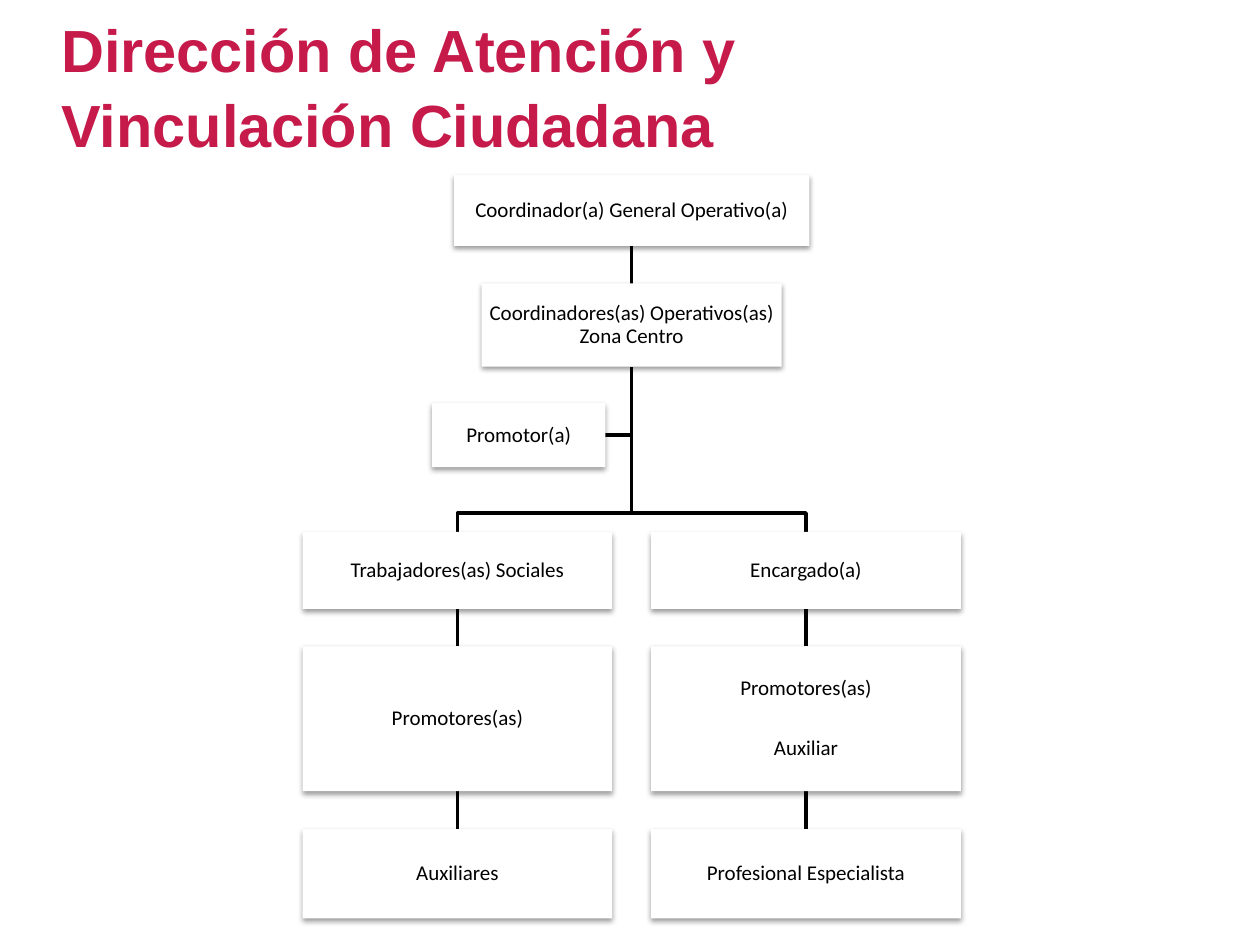
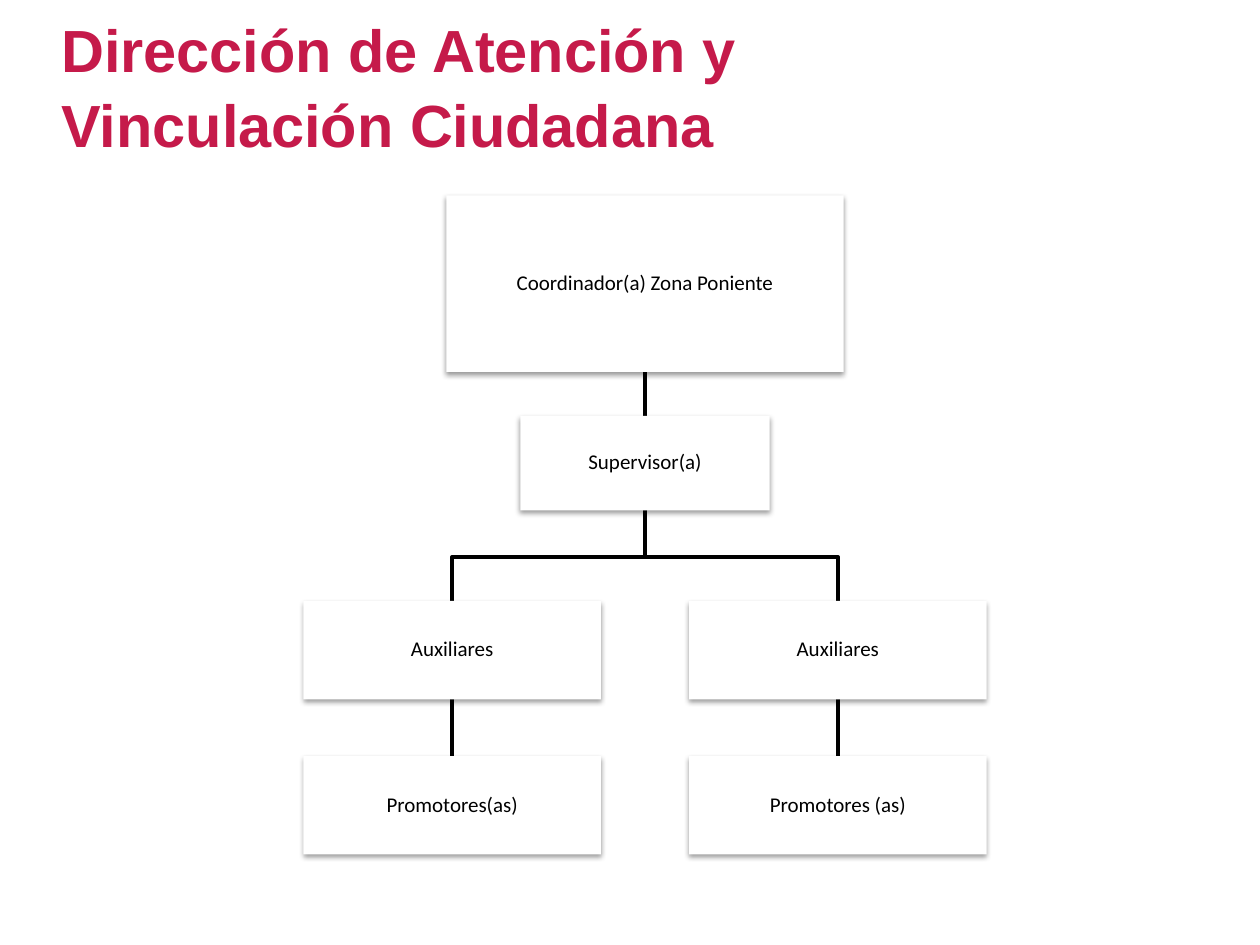
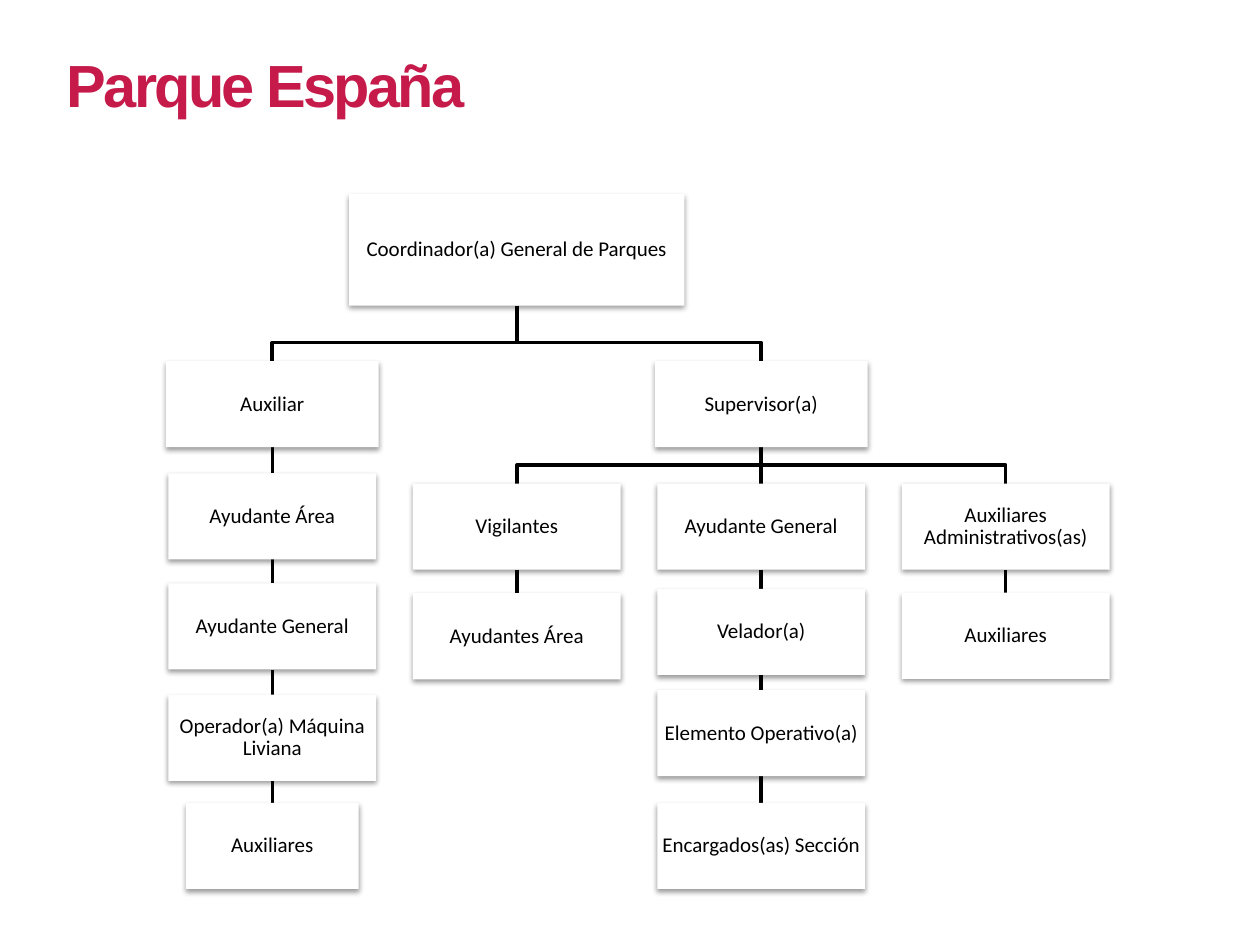
from lxml import etree
from pptx import Presentation
from pptx.dml.color import RGBColor
from pptx.enum.shapes import MSO_CONNECTOR, MSO_SHAPE
from pptx.enum.text import MSO_ANCHOR, PP_ALIGN
from pptx.oxml.ns import qn
from pptx.util import Pt

RECT = MSO_SHAPE.RECTANGLE
LINE = MSO_CONNECTOR.STRAIGHT
MIDDLE = MSO_ANCHOR.MIDDLE
CENTER = PP_ALIGN.CENTER
ROSE, BLACK, WHITE = "C51A4A", "000000", "FFFFFF"
AREA = "Dirección de Atención y Vinculación Ciudadana"


def color(code):
    """Turn a hex string into a colour."""
    return RGBColor.from_string(code)


def add_title(slide, text, left, top, width, height, track=0):
    """Write the slide title, with letter tracking in points."""
    box = slide.shapes.add_textbox(Pt(left), Pt(top), Pt(width), Pt(height))
    frame = box.text_frame
    frame.word_wrap = True
    frame.text = text
    para = frame.paragraphs[0]
    para.line_spacing = 1.04
    run = para.runs[0]
    font = run.font
    font.name, font.size, font.bold = "Arial", Pt(34), True
    font.color.rgb = color(ROSE)
    if track:
        run._r.get_or_add_rPr().set("spc", str(int(track * 100)))


def add_shade(shape):
    """Give a box a soft shadow that falls below it."""
    shape.shadow.inherit = False
    effects = shape._element.spPr.find(qn("a:effectLst"))
    shade = etree.SubElement(
        effects, qn("a:outerShdw"), blurRad=str(Pt(3.1)), dist=str(Pt(1.6)),
        dir="5400000", algn="ctr", rotWithShape="0")
    tint = etree.SubElement(shade, qn("a:srgbClr"), val=BLACK)
    etree.SubElement(tint, qn("a:alpha"), val="38000")


def add_post(slide, mid, top, width, height, text):
    """Draw one post of the chart, centred on mid."""
    shape = slide.shapes.add_shape(
        RECT, Pt(mid - width / 2), Pt(top), Pt(width), Pt(height))
    shape.fill.solid()
    shape.fill.fore_color.rgb = color(WHITE)
    shape.line.fill.background()
    add_shade(shape)
    frame = shape.text_frame
    frame.word_wrap = True
    frame.vertical_anchor = MIDDLE
    frame.margin_left = frame.margin_right = Pt(0.7)
    frame.margin_top = frame.margin_bottom = Pt(0.7)
    frame.text = text
    for rank, para in enumerate(frame.paragraphs):
        para.alignment = CENTER
        para.line_spacing = 0.9
        if rank:
            para.space_before = Pt(21)
        para.font.name, para.font.size = "Calibri", Pt(12)
        para.font.color.rgb = color(BLACK)


def set_line(shape):
    """Give a link its black line."""
    shape.line.color.rgb = color(BLACK)
    shape.line.width = Pt(2)


def add_line(slide, x1, y1, x2, y2):
    """Draw a straight link."""
    line = slide.shapes.add_connector(LINE, Pt(x1), Pt(y1), Pt(x2), Pt(y2))
    etree.SubElement(line._element.spPr, qn("a:effectLst"))
    set_line(line)


def add_bend(slide, x1, y1, x2, y2, drop):
    """Draw a link that turns at a bar set drop above its end."""
    bar = Pt(y2 - drop)
    pen = slide.shapes.build_freeform(Pt(x1), Pt(y1))
    pen.add_line_segments(
        [(Pt(x1), bar), (Pt(x2), bar), (Pt(x2), Pt(y2))], close=False)
    shape = pen.convert_to_shape()
    shape.fill.background()
    shape.shadow.inherit = False
    set_line(shape)


def add_chart(slide, posts, drop):
    """Draw links first, then posts of (boss, mid, top, width, height, text)."""
    for boss, mid, top, *_ in posts:
        if boss is None:
            continue
        _, x, y, _, tall, _ = posts[boss]
        if x == mid:
            add_line(slide, x, y + tall, mid, top)
        else:
            add_bend(slide, x, y + tall, mid, top, drop)
    for _, *post in posts:
        add_post(slide, *post)


def add_branch(posts, boss, mid, width, rows):
    """Hang rows of (top, height, text) below a boss, one under another."""
    for top, height, text in rows:
        posts.append((boss, mid, top, width, height, text))
        boss = len(posts) - 1


def draw_centre(slide):
    """Draw the central zone."""
    add_title(slide, AREA, 28, 2.5, 461, 90)
    mid, side = 361, 99.6
    posts = [(None, mid, 100, 203, 40.5, "Coordinador(a) General Operativo(a)"),
             (0, mid, 162, 171.5, 47.5,
              "Coordinadores(as) Operativos(as) Zona Centro")]
    tops, talls = (304, 369.3, 473.8), (44, 82.8, 51)
    names = [("Trabajadores(as) Sociales", "Promotores(as)", "Auxiliares"),
             ("Encargado(a)", "Promotores(as)\nAuxiliar",
              "Profesional Especialista")]
    for x, column in zip((mid - side, mid + side), names):
        add_branch(posts, 1, x, 177, zip(tops, talls, column))
    add_line(slide, 345.6, 248.7, mid, 248.7)
    add_chart(slide, posts, 10.8)
    add_post(slide, 296.4, 230.4, 99, 36.6, "Promotor(a)")


def draw_west(slide):
    """Draw the western zone."""
    add_title(slide, AREA, 28, 2.5, 461, 90)
    mid, side = 368.6, 110.2
    posts = [(None, mid, 111.6, 227, 101, "Coordinador(a) Zona Poniente"),
             (0, mid, 237.6, 142.5, 54, "Supervisor(a)")]
    for x, last in ((mid - side, "Promotores(as)"),
                    (mid + side, "Promotores (as)")):
        add_branch(posts, 1, x, 170,
                   [(343.4, 56.2, "Auxiliares"), (432, 56.2, last)])
    add_chart(slide, posts, 25.2)


def draw_park(slide):
    """Draw the park staff."""
    add_title(slide, "Parque España", 31, 22.5, 255, 49.7, -1.5)
    cols = [155.6 + 139.7 * step for step in range(4)]
    tall, wide = 49.2, 118.8
    posts = [(None, cols[1], 110.8, 191.5, 63.8,
              "Coordinador(a) General de Parques"),
             (0, cols[0], 206.4, 121.7, tall, "Auxiliar"),
             (0, cols[2], 206.4, 121.7, tall, "Supervisor(a)")]
    branches = [
        (1, 0, [(270.5, "Ayudante Área"), (333.4, "Ayudante General"),
                (397, "Operador(a) Máquina Liviana")]),
        (2, 1, [(276.4, "Vigilantes"), (339, "Ayudantes Área")]),
        (2, 2, [(276.4, "Ayudante General"), (336.5, "Velador(a)"),
                (394.4, "Elemento Operativo(a)"),
                (458.8, "Encargados(as) Sección")]),
        (2, 3, [(276.4, "Auxiliares Administrativos(as)"),
                (338.7, "Auxiliares")])]
    for boss, col, rows in branches:
        add_branch(posts, boss, cols[col], wide,
                   [(top, tall, text) for top, text in rows])
    posts.append((5, cols[0], 458.8, 98.8, tall, "Auxiliares"))
    add_chart(slide, posts, 10.6)


def main():
    """Build the three charts and save them."""
    deck = Presentation()
    deck.slide_width, deck.slide_height = Pt(720), Pt(540)
    for draw in (draw_centre, draw_west, draw_park):
        draw(deck.slides.add_slide(deck.slide_layouts[6]))
    deck.save("out.pptx")


if __name__ == "__main__":
    main()
